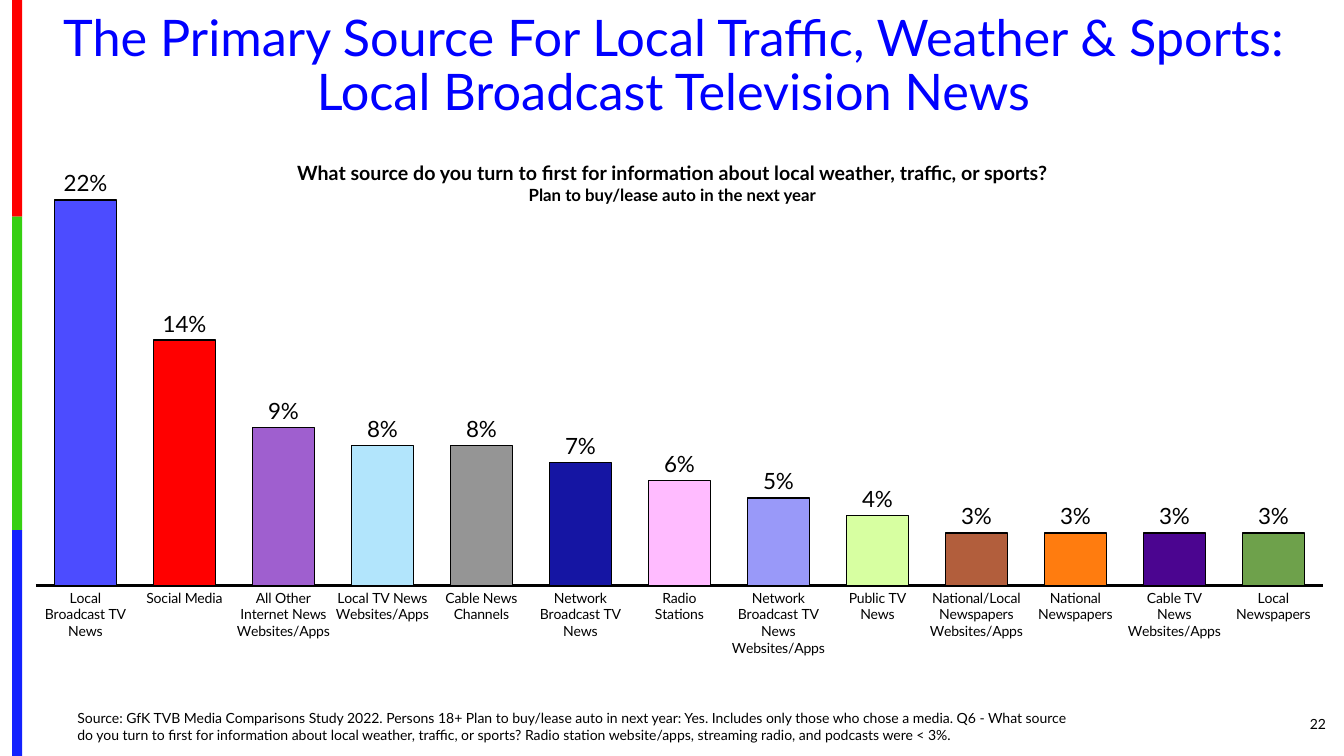
from lxml import etree
from pptx import Presentation
from pptx import util as u
from pptx.chart.data import CategoryChartData
from pptx.dml.color import RGBColor
from pptx.enum import chart as charts, shapes, text
from pptx.oxml import parse_xml
from pptx.oxml.ns import nsdecls

FACE = "Lato"
BLACK = "000000"
STRIPES = [("FE0000", 2.15), ("36CF12", 3.11), ("1322FE", 2.24)]
SOURCES = [
    ("Local Broadcast TV News", 0.22, "4C4CFF"),
    ("Social Media", 0.14, "FF0000"),
    ("All Other Internet News Websites/Apps", 0.09, "9F5FCF"),
    ("Local TV News Websites/Apps", 0.08, "B2E5FC"),
    ("Cable News Channels", 0.08, "959595"),
    ("Network Broadcast TV News", 0.07, "1515A3"),
    ("Radio\nStations", 0.06, "FFBBFF"),
    ("Network Broadcast TV News Websites/Apps", 0.05, "9999F9"),
    ("Public TV News", 0.04, "D7FFA1"),
    ("National/Local Newspapers Websites/Apps", 0.03, "B25E3C"),
    ("National Newspapers", 0.03, "FF7C0F"),
    ("Cable TV\nNews\nWebsites/Apps", 0.03, "4B0590"),
    ("Local Newspapers", 0.03, "6EA14B"),
]
TITLE = "The Primary Source For Local Traffic, Weather & Sports:\vLocal Broadcast Television News"
QUESTION = "What source do you turn to first for information about local weather, traffic, or sports?"
AUDIENCE = "Plan to buy/lease auto in the next year"
FOOTNOTE = (
    "Source: GfK TVB Media Comparisons Study 2022. Persons 18+ Plan to buy/lease auto in next year: Yes. "
    "Includes only those who chose a media. Q6 - What source do you turn to first for information about "
    "local weather, traffic, or sports? Radio station website/apps, streaming radio, and podcasts were < 3%."
)


def rgb(code):
    """Turn a hex string into a colour."""
    return RGBColor.from_string(code)


def style_font(font, size, color=BLACK, bold=False):
    """Apply the deck typeface with a size, colour and weight."""
    font.name = FACE
    font.size = u.Pt(size)
    font.bold = bold
    font.color.rgb = rgb(color)


def write(paragraph, words, size, color=BLACK, bold=False, align=text.PP_ALIGN.LEFT, spacing=None):
    """Fill a paragraph with formatted text."""
    paragraph.text = words
    paragraph.alignment = align
    paragraph.line_spacing = spacing
    for run in paragraph.runs:
        style_font(run.font, size, color, bold)


def add_frame(slide, left, top, width, height, anchor=text.MSO_ANCHOR.TOP):
    """Add a wrapping text box and return its text frame."""
    box = slide.shapes.add_textbox(*map(u.Inches, (left, top, width, height)))
    frame = box.text_frame
    frame.word_wrap = True
    frame.vertical_anchor = anchor
    return frame


def add_stripes(slide):
    """Stack the coloured stripes down the left edge."""
    top = 0
    for color, height in STRIPES:
        stripe = slide.shapes.add_shape(
            shapes.MSO_SHAPE.RECTANGLE, *map(u.Inches, (0.12, top, 0.1, height)))
        stripe.shadow.inherit = False
        stripe.fill.solid()
        stripe.fill.fore_color.rgb = rgb(color)
        stripe.line.fill.background()
        top += height


def place_plot(chart, **fractions):
    """Fix the inner plot area as fractions of the chart."""
    plot_area = chart.plots[0]._element.getparent()
    for old in plot_area.findall("{*}layout"):
        plot_area.remove(old)
    layout = parse_xml(
        f'<c:layout {nsdecls("c")}><c:manualLayout><c:layoutTarget val="inner"/>'
        '<c:xMode val="edge"/><c:yMode val="edge"/></c:manualLayout></c:layout>')
    for key, value in fractions.items():
        etree.SubElement(layout[0], layout[0][0].tag.replace("layoutTarget", key), val=str(value))
    plot_area.insert(0, layout)


def add_source_chart(slide):
    """Draw the share of each news source as a column."""
    names, shares, colors = zip(*SOURCES)
    data = CategoryChartData(number_format="0%")
    data.categories = names
    data.add_series("Series 1", shares)
    chart = slide.shapes.add_chart(
        charts.XL_CHART_TYPE.COLUMN_CLUSTERED,
        *map(u.Inches, (0.33, 0.83, 12.92, 6.14)), data).chart
    chart.has_legend = False
    chart.has_title = False
    style_font(chart.font, 10)
    place_plot(chart, x=0.002, y=0.103, w=0.988, h=0.708)

    shares_axis = chart.value_axis
    shares_axis.minimum_scale, shares_axis.maximum_scale = 0, 0.25
    shares_axis.has_major_gridlines = False
    shares_axis.visible = False
    names_axis = chart.category_axis
    names_axis.major_tick_mark = charts.XL_TICK_MARK.NONE
    names_axis.format.line.color.rgb = rgb(BLACK)
    names_axis.format.line.width = u.Pt(1.5)
    style_font(names_axis.tick_labels.font, 10)

    columns = chart.plots[0]
    columns.gap_width = 60
    columns.vary_by_categories = False
    columns.has_data_labels = True
    labels = columns.data_labels
    labels.show_value = True
    labels.number_format = "0%"
    labels.number_format_is_linked = False
    labels.position = charts.XL_LABEL_POSITION.OUTSIDE_END
    style_font(labels.font, 16)
    for index, color in enumerate(colors):
        look = columns.series[0].points[index].format
        look.fill.solid()
        look.fill.fore_color.rgb = rgb(color)
        look.line.color.rgb = rgb(BLACK)
        look.line.width = u.Pt(1)


def main():
    """Build the slide and save it."""
    deck = Presentation()
    deck.slide_width, deck.slide_height = u.Inches(13.33), u.Inches(7.5)
    slide = deck.slides.add_slide(deck.slide_layouts[6])
    center = text.PP_ALIGN.CENTER
    add_stripes(slide)

    page = add_frame(slide, 12.17, 6.98, 1.08, 0.4, text.MSO_ANCHOR.MIDDLE)
    write(page.paragraphs[0], "22", 10, align=text.PP_ALIGN.RIGHT)
    footnote = add_frame(slide, 0.67, 6.98, 10, 0.44, text.MSO_ANCHOR.BOTTOM)
    write(footnote.paragraphs[0], FOOTNOTE, 10)
    title = add_frame(slide, 0.37, 0.08, 12.62, 1.19)
    write(title.paragraphs[0], TITLE, 36, color="0000FF", align=center, spacing=0.9)
    question = add_frame(slide, 1.88, 1.55, 9.58, 0.54)
    write(question.paragraphs[0], QUESTION, 14, bold=True, align=center)
    write(question.add_paragraph(), AUDIENCE, 12, bold=True, align=center)

    add_source_chart(slide)
    deck.save("out.pptx")


if __name__ == "__main__":
    main()
